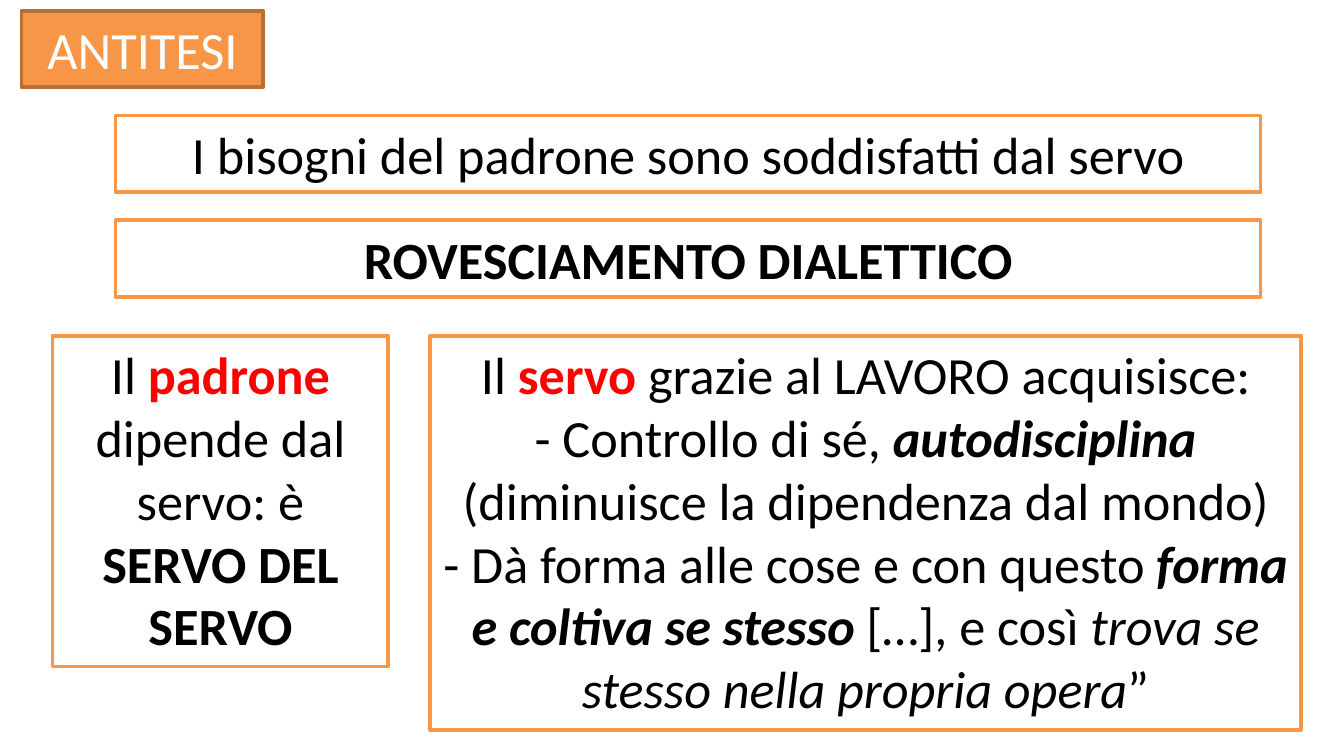
from pptx import Presentation
from pptx.dml.color import RGBColor
from pptx.enum.shapes import MSO_SHAPE
from pptx.enum.text import MSO_ANCHOR, MSO_AUTO_SIZE, PP_ALIGN
from pptx.util import Inches, Pt

WHITE = RGBColor(0xFF, 0xFF, 0xFF)
BLACK = RGBColor(0x00, 0x00, 0x00)
RED = RGBColor(0xFF, 0x00, 0x00)
ORANGE = RGBColor(0xF7, 0x96, 0x46)
BROWN = RGBColor(0xB7, 0x6F, 0x34)


class SlideBuilder:
    font = "Calibri"
    size = Pt(28)
    line_width = Pt(2)

    def __init__(self, slide):
        self.slide = slide

    def box(self, x, y, w, h, paragraphs, fill=WHITE, line=ORANGE, color=BLACK):
        """Each paragraph is a list of (text, style); style holds b, i and/or r(ed)."""
        sp = self.slide.shapes.add_shape(
            MSO_SHAPE.RECTANGLE, Inches(x), Inches(y), Inches(w), Inches(h))
        sp.shadow.inherit = False
        sp.fill.solid()
        sp.fill.fore_color.rgb = fill
        sp.line.color.rgb = line
        sp.line.width = self.line_width
        tf = sp.text_frame
        tf.word_wrap = True
        tf.auto_size = MSO_AUTO_SIZE.SHAPE_TO_FIT_TEXT
        tf.vertical_anchor = MSO_ANCHOR.TOP
        for n, runs in enumerate(paragraphs):
            p = tf.add_paragraph() if n else tf.paragraphs[0]
            self.paragraph(p, runs, color)

    def paragraph(self, p, runs, color):
        p.alignment = PP_ALIGN.CENTER
        p.font.name = self.font
        p.font.size = self.size
        p.font.color.rgb = color
        for text, style in runs:
            r = p.add_run()
            r.text = text
            if "b" in style:
                r.font.bold = True
            if "i" in style:
                r.font.italic = True
            if "r" in style:
                r.font.color.rgb = RED


prs = Presentation()
# Widescreen, 16:9
prs.slide_width = Inches(10)
prs.slide_height = prs.slide_width * 9 // 16
s = SlideBuilder(prs.slides.add_slide(prs.slide_layouts[6]))

# Premise
s.box(0.86, 0.86, 8.52, 0.57,
      [[("I bisogni del padrone sono soddisfatti dal servo", "")]])

# Section label
s.box(0.16, 0.08, 1.8, 0.57, [[("ANTITESI", "")]],
      fill=ORANGE, line=BROWN, color=WHITE)

# Dialectical reversal
s.box(0.86, 1.64, 8.52, 0.57, [[("ROVESCIAMENTO DIALETTICO", "b")]])

# Master
s.box(0.39, 2.5, 2.5, 2.46, [
    [("Il ", ""), ("padrone", "br"), (" dipende dal servo: è ", ""),
     ("SERVO DEL SERVO", "b")],
])

# Servant
s.box(3.2, 2.5, 6.48, 2.93, [
    [("Il ", ""), ("servo", "br"), (" grazie al LAVORO acquisisce:", "")],
    [("- Controllo di sé, ", ""), ("autodisciplina", "bi"),
     (" (diminuisce la dipendenza dal mondo)", "")],
    [("- Dà forma alle cose e con questo ", ""),
     ("forma e coltiva se stesso ", "bi"), ("[…], e così ", ""),
     ("trova se stesso nella propria opera", "i"), ("”", "")],
])

prs.save("out.pptx")
